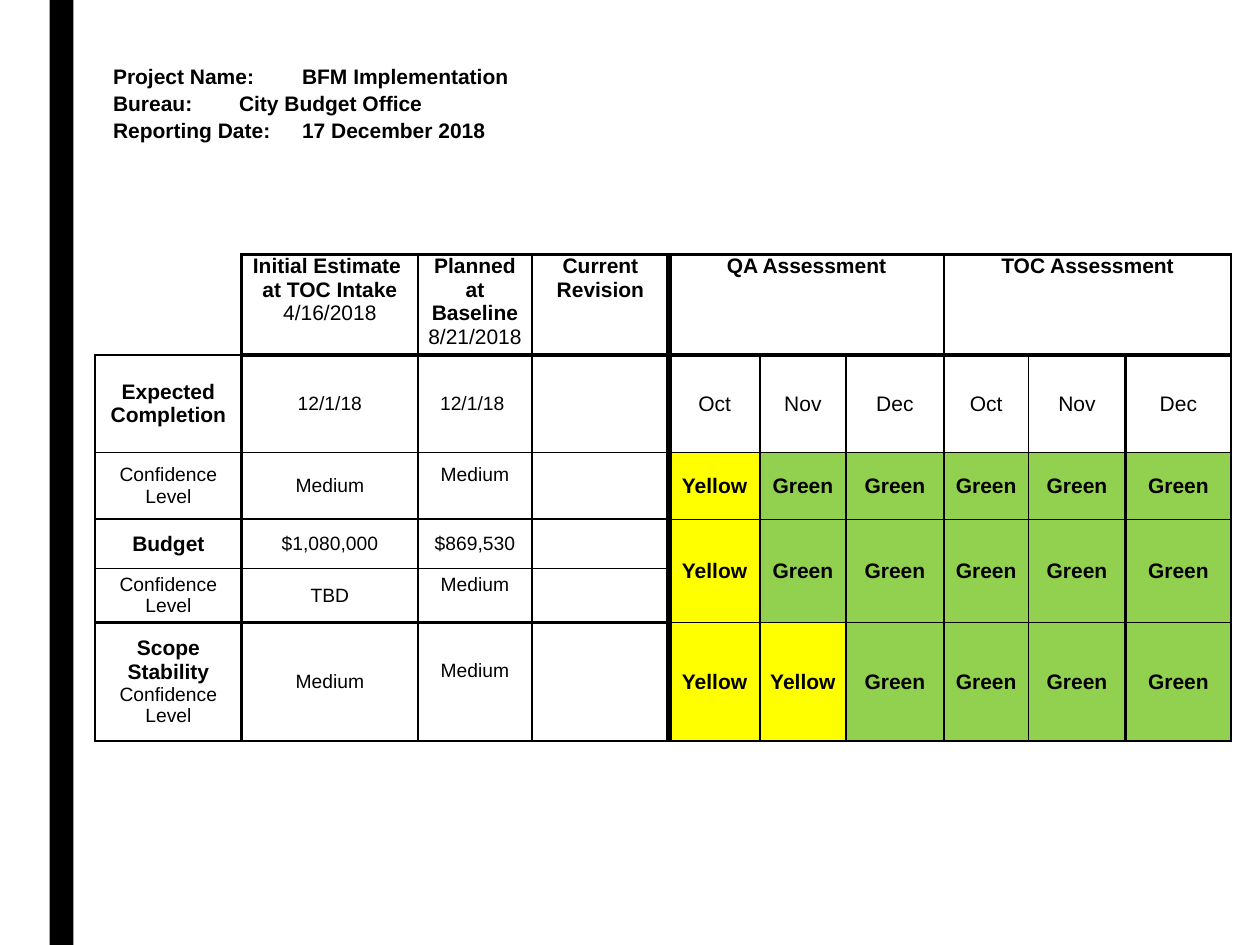
from lxml.etree import SubElement
from pptx import Presentation
from pptx.dml.color import RGBColor
from pptx.enum.shapes import MSO_SHAPE as Shape
from pptx.enum.text import MSO_ANCHOR as Anchor, PP_ALIGN as Align
from pptx.oxml.ns import qn
from pptx.util import Cm, Pt


def color(value):
    return RGBColor.from_string(value)


def write(text_frame, lines, align):
    """Fill a text frame with (text, size, bold) lines, one per paragraph."""
    for number, (text, size, bold) in enumerate(lines):
        paragraph = text_frame.add_paragraph() if number else text_frame.paragraphs[0]
        paragraph.alignment = align
        run = paragraph.add_run()
        run.text = text
        for name, value in {"name": "Arial", "size": Pt(size), "bold": bold}.items():
            setattr(run.font, name, value)
        run.font.color.rgb = color("000000")


presentation = Presentation()
presentation.slide_width, presentation.slide_height = Cm(25.4), Cm(19.05)
slide = presentation.slides.add_slide(presentation.slide_layouts[6])

# Black side bar
bar = slide.shapes.add_shape(Shape.RECTANGLE, Cm(1), 0, Cm(0.48), Cm(19.05))
bar.shadow.inherit = False
bar.fill.solid()
bar.fill.fore_color.rgb = color("000000")
bar.line.fill.background()

# Assessment table: text of each cell as (text, size, bold) lines
GREEN, YELLOW = [("Green", 12, True)], [("Yellow", 12, True)]
CONFIDENCE = [("Confidence Level", 11, False)]
MEDIUM = [("Medium", 11, False)]
MONTHS = [[(month, 12, False)] for month in ("Oct", "Nov", "Dec")]
rows = [
    [[],
     [("Initial Estimate ", 12, True), ("at TOC Intake", 12, True), ("4/16/2018", 12, False)],
     [("Planned at Baseline", 12, True), ("8/21/2018", 12, False)],
     [("Current Revision", 12, True)],
     [("QA Assessment", 12, True)], [], [],
     [("TOC Assessment", 12, True)], [], []],
    [[("Expected Completion", 12, True)], [("12/1/18", 11, False)], [("12/1/18", 11, False)], []]
    + MONTHS * 2,
    [CONFIDENCE, MEDIUM, MEDIUM, [], YELLOW] + [GREEN] * 5,
    [[("Budget", 12, True)], [("$1,080,000", 11, False)], [("$869,530", 11, False)], [], YELLOW]
    + [GREEN] * 5,
    [CONFIDENCE, [("TBD", 11, False)], MEDIUM, []] + [[]] * 6,
    [[("Scope Stability", 12, True)] + CONFIDENCE, MEDIUM, MEDIUM, [], YELLOW, YELLOW]
    + [GREEN] * 4,
]
column_widths = [2.95, 3.56, 2.29, 2.77, 1.83, 1.73, 1.98, 1.7, 1.96, 2.13]
row_heights = [2.03, 1.96, 1.35, 0.99, 1.09, 2.39]

frame = slide.shapes.add_table(len(rows), len(column_widths), Cm(1.92), Cm(5.13),
                               Cm(sum(column_widths)), Cm(sum(row_heights)))
table = frame.table
table.first_row = table.horz_banding = False
for column, width in zip(table.columns, column_widths):
    column.width = Cm(width)
for row, height in zip(table.rows, row_heights):
    row.height = Cm(height)

# Headings span three months, budget ratings span two rows
for left in (4, 7):
    table.cell(0, left).merge(table.cell(0, left + 2))
for column in range(4, 10):
    table.cell(3, column).merge(table.cell(4, column))

# Rule widths in points, by column edge and by row edge
vertical_rules = [1.5, 2.25, 1, 1, 3.75, 1, 1, 1.5, 1, 1.5, 1.5]
estimate_rules = [1.5, 2.25, 1, 1.5, 1, 1.5, 1.5]
rating_rules = [1.5, 2.25, 1, 1, 1, 1, 1.5]
label_rules = [0, 1.5, 1, 1.5, 1, 1.5, 1.5]

for r, row in enumerate(rows):
    for c, lines in enumerate(row):
        cell = table.cell(r, c)
        if cell.is_spanned:
            cell.fill.background()
            continue
        cell_format = {"margin_left": Cm(0.18), "margin_right": Cm(0.18),
                       "margin_top": 0, "margin_bottom": 0,
                       "vertical_anchor": Anchor.MIDDLE if r else Anchor.TOP}
        if c == 2 and lines is MEDIUM:
            cell_format["margin_bottom"] = Cm(0.44)
        if (r, c) == (1, 2):
            cell_format["margin_right"] = Cm(0.29)
        for name, value in cell_format.items():
            setattr(cell, name, value)
        write(cell.text_frame, lines, Align.CENTER)

        # Borders
        right, bottom = c + 1, r + 1
        if cell.is_merge_origin:
            right, bottom = c + cell.span_width, r + cell.span_height
        rules = label_rules if c == 0 else estimate_rules if c < 4 else rating_rules
        sides = {"L": vertical_rules[c], "R": vertical_rules[right],
                 "T": rules[r], "B": rules[bottom]}
        if r == 0 and c < 2:
            sides["R" if c == 0 else "L"] = 1.5
        if (r, c) == (0, 0):
            sides["L"] = 0
        for side, points in sides.items():
            line = SubElement(cell._tc.get_or_add_tcPr(), qn(f"a:ln{side}"), w=str(Pt(points)))
            if points:
                SubElement(SubElement(line, qn("a:solidFill")), qn("a:srgbClr"), val="000000")
            else:
                SubElement(line, qn("a:noFill"))

        # Rating colour
        if lines in (GREEN, YELLOW):
            cell.fill.solid()
            cell.fill.fore_color.rgb = color("92D050" if lines is GREEN else "FFFF00")
        else:
            cell.fill.background()

# Project details
details = slide.shapes.add_textbox(Cm(2.03), Cm(1.12), Cm(21.95), Cm(2.31))
details_frame = details.text_frame
for name, value in {"word_wrap": True, "vertical_anchor": Anchor.TOP,
                    "margin_top": Cm(0.17)}.items():
    setattr(details_frame, name, value)
write(details_frame, [("Project Name:\tBFM Implementation", 12, True),
                      ("Bureau:\tCity Budget Office", 12, True),
                      ("Reporting Date:\t17 December 2018", 12, True)], Align.LEFT)
for paragraph in details_frame.paragraphs[1:]:
    paragraph.space_before = Pt(0.8)

presentation.save("out.pptx")
